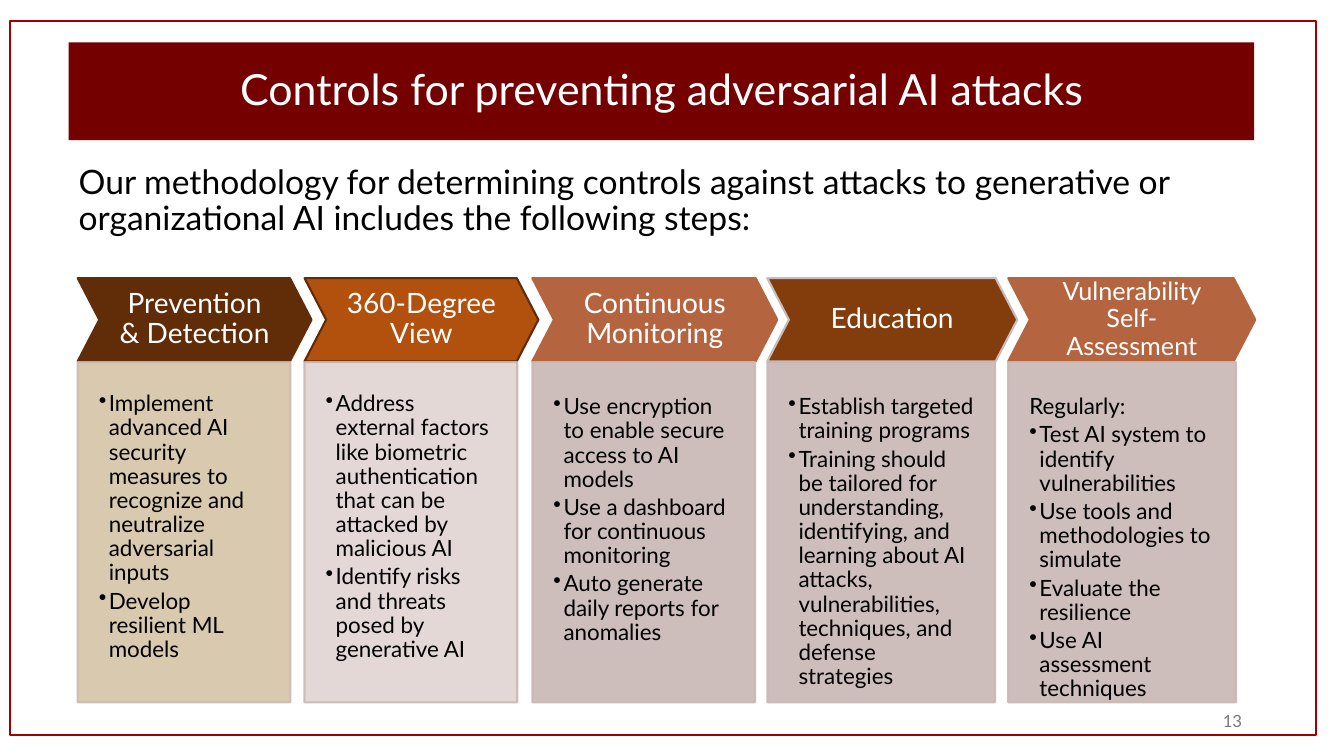
from dataclasses import dataclass

from lxml.etree import SubElement
from pptx import Presentation
from pptx.dml.color import RGBColor
from pptx.enum.shapes import MSO_SHAPE as Preset
from pptx.enum.text import MSO_ANCHOR as Anchor, MSO_AUTO_SIZE as AutoSize, PP_ALIGN as Align
from pptx.oxml.ns import qn
from pptx.util import Inches, Pt

PAGE_WIDTH, PAGE_HEIGHT = Inches(13.33), Inches(7.5)
FONT = "Lato"
WHITE = RGBColor(0xFF, 0xFF, 0xFF)
BLACK = RGBColor(0x00, 0x00, 0x00)
GREY = RGBColor(0x79, 0x79, 0x79)
MAROON = RGBColor(0x74, 0x00, 0x00)
RED = RGBColor(0xA2, 0x00, 0x00)
DARK_BROWN = RGBColor(0x61, 0x2C, 0x08)
BROWN = RGBColor(0x83, 0x3C, 0x0B)
ORANGE = RGBColor(0xB2, 0x50, 0x0E)
COPPER = RGBColor(0xB5, 0x64, 0x40)
SILVER = RGBColor(0xC7, 0xBC, 0xB9)
SAND = RGBColor(0xD5, 0xC5, 0xA7)
ROSE = RGBColor(0xE0, 0xD4, 0xD2)
TAUPE = RGBColor(0xC8, 0xB8, 0xB4)

# Rows of the step grid, in percent of the page height: top, height
HEADER_ROW = (36.8, 11)
PANEL_ROW = (47.9, 45)
PANEL_OPACITY = 90
CHEVRON_POINT = 0.26


@dataclass
class Step:
    """One column; left and widths are percent of the page width."""
    heading: str
    left: float
    header_width: float
    panel_width: float
    header_fill: RGBColor
    header_line: RGBColor
    panel_fill: RGBColor
    bullets: list
    intro: str = ""
    heading_size: int = 20
    panel_inset: float = 0.33


STEPS = [
    Step("Prevention & Detection", 5.78, 17.4, 15.83, DARK_BROWN, DARK_BROWN, SAND, [
        "Implement advanced AI security measures to recognize and neutralize adversarial inputs",
        "Develop resilient ML models",
    ], panel_inset=0.3),
    Step("360-Degree View", 22.66, 17.4, 15.83, ORANGE, DARK_BROWN, ROSE, [
        "Address external factors like biometric authentication that can be attacked by "
        "malicious AI",
        "Identify risks and threats posed by generative AI",
    ], panel_inset=0.3),
    Step("Continuous Monitoring", 39.61, 18.23, 16.58, COPPER, COPPER, TAUPE, [
        "Use encryption to enable secure access to AI models",
        "Use a dashboard for continuous monitoring",
        "Auto generate daily reports for anomalies",
    ]),
    Step("Education", 57.09, 18.6, 16.95, BROWN, SILVER, TAUPE, [
        "Establish targeted training programs",
        "Training should be tailored for understanding, identifying, and learning about AI "
        "attacks, vulnerabilities, techniques, and defense strategies",
    ]),
    Step("Vulnerability Self-Assessment", 75.02, 18.38, 16.95, COPPER, COPPER, TAUPE, [
        "Test AI system to identify vulnerabilities",
        "Use tools and methodologies to simulate",
        "Evaluate the resilience",
        "Use AI assessment techniques",
    ], intro="Regularly:", heading_size=18),
]


def set_values(target, values):
    for name, value in values.items():
        setattr(target, name, value)


def area(left, top, width, height):
    """Turn percent of the page into left, top, width and height."""
    return (int(PAGE_WIDTH * left / 100), int(PAGE_HEIGHT * top / 100),
            int(PAGE_WIDTH * width / 100), int(PAGE_HEIGHT * height / 100))


def place(shape, *shares):
    set_values(shape, dict(zip(("left", "top", "width", "height"), area(*shares))))


def set_frame(shape, anchor, insets=(0.1, 0.05, 0.1, 0.05)):
    sides = ("margin_left", "margin_top", "margin_right", "margin_bottom")
    set_values(shape.text_frame, {
        "word_wrap": True, "auto_size": AutoSize.NONE, "vertical_anchor": anchor,
        **dict(zip(sides, map(Inches, insets)))})


def write(para, text, size, color, **layout):
    set_values(para, {"alignment": Align.LEFT, "line_spacing": 0.9, **layout})
    span = para.add_run()
    span.text = text
    set_values(span.font, {"name": FONT, "size": Pt(size)})
    span.font.color.rgb = color


def set_bullet(para, mark=None):
    """Give the paragraph a hanging mark, or remove bullet and indent."""
    hang = Inches(0.1) if mark else 0
    props = para._p.get_or_add_pPr()
    props.set("marL", str(hang))
    props.set("indent", str(-hang))
    if mark:
        SubElement(props, qn("a:buChar")).set("char", mark)
    else:
        SubElement(props, qn("a:buNone"))


def set_opacity(shape, percent):
    for color in shape._element.spPr.iter(qn("a:srgbClr")):
        SubElement(color, qn("a:alpha")).set("val", str(percent * 1000))


def add_block(page, preset, shares, line, fill=None):
    block = page.shapes.add_shape(preset, *area(*shares))
    block.shadow.inherit = False
    if fill is None:
        block.fill.background()
    else:
        block.fill.solid()
        block.fill.fore_color.rgb = fill
    block.line.color.rgb = line
    block.line.width = Pt(1.5)
    return block


def add_title(page, text):
    title = page.shapes.title
    place(title, 5.1, 5.6, 88.22, 12.93)
    title.fill.solid()
    title.fill.fore_color.rgb = MAROON
    set_frame(title, Anchor.MIDDLE)
    write(title.text_frame.paragraphs[0], text, 30.6, WHITE, alignment=Align.CENTER)


def add_lead(page, text):
    lead = page.placeholders[1]
    place(lead, 5.1, 21.2, 89.8, 73.33)
    set_frame(lead, Anchor.TOP)
    para = lead.text_frame.paragraphs[0]
    write(para, text, 24, BLACK, space_before=Pt(10))
    set_bullet(para)


def add_page_number(page, number):
    box = page.shapes.add_textbox(*area(70.67, 92.67, 22.5, 5.33))
    set_frame(box, Anchor.MIDDLE)
    write(box.text_frame.paragraphs[0], number, 12, GREY,
          alignment=Align.RIGHT, line_spacing=1.0)


def add_header(page, step):
    top, height = HEADER_ROW
    header = add_block(page, Preset.CHEVRON, (step.left, top, step.header_width, height),
                       step.header_line, step.header_fill)
    header.adjustments[0] = CHEVRON_POINT
    set_frame(header, Anchor.MIDDLE, (0.16, 0.11, 0.16, 0.11))
    write(header.text_frame.paragraphs[0], step.heading, step.heading_size, WHITE,
          alignment=Align.CENTER)


def add_panel(page, step):
    top, height = PANEL_ROW
    panel = add_block(page, Preset.RECTANGLE, (step.left, top, step.panel_width, height),
                      TAUPE, step.panel_fill)
    set_opacity(panel, PANEL_OPACITY)
    set_frame(panel, Anchor.TOP, (0.21, step.panel_inset, 0.21, 0.2))
    frame = panel.text_frame
    lines = [(text, "•") for text in step.bullets]
    if step.intro:
        lines.insert(0, (step.intro, None))
    for index, (text, mark) in enumerate(lines):
        para = frame.add_paragraph() if index else frame.paragraphs[0]
        write(para, text, 16, BLACK, space_after=Pt(2.9))
        set_bullet(para, mark)


def main():
    deck = Presentation()
    set_values(deck, {"slide_width": PAGE_WIDTH, "slide_height": PAGE_HEIGHT})
    page = deck.slides.add_slide(deck.slide_layouts[1])
    add_title(page, "Controls for preventing adversarial AI attacks")
    add_lead(page, "Our methodology for determining controls against attacks to generative or "
                   "organizational AI includes the following steps:")
    add_block(page, Preset.RECTANGLE, (0.75, 2.8, 97.15, 94.4), RED)
    add_page_number(page, "13")
    for step in STEPS:
        add_header(page, step)
        add_panel(page, step)
    deck.save("out.pptx")


if __name__ == "__main__":
    main()
